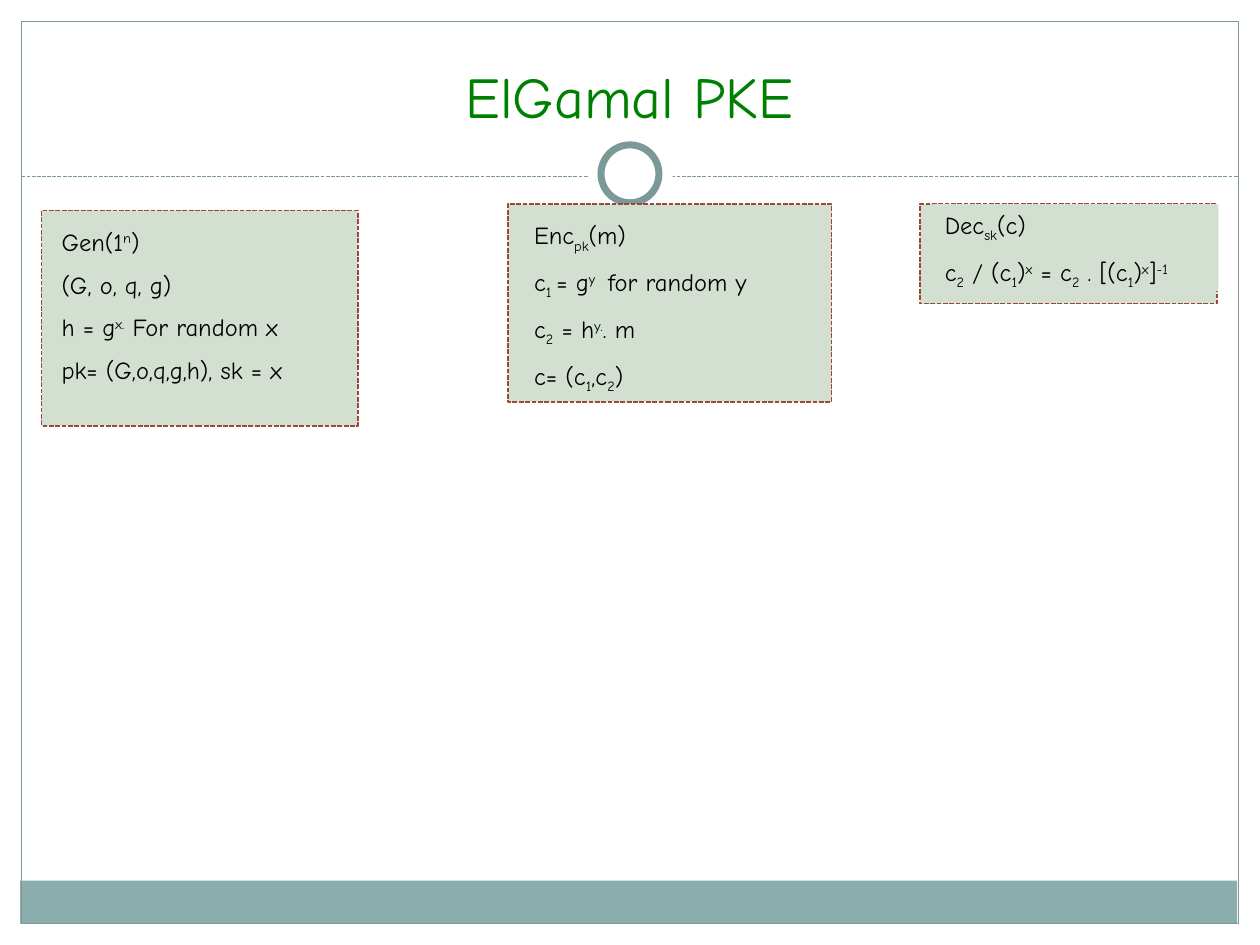
from dataclasses import dataclass
from typing import Any

from pptx import Presentation
from pptx.dml.color import RGBColor
from pptx.enum.dml import MSO_LINE_DASH_STYLE as Dash
from pptx.enum.shapes import MSO_CONNECTOR as Connector, MSO_SHAPE as Shape
from pptx.enum.text import MSO_ANCHOR as Anchor, PP_ALIGN as Align
from pptx.oxml.ns import qn
from pptx.util import Emu, Pt

PX = 9144  # EMU per px, 100 px to the inch


@dataclass(frozen=True)
class Theme:
    font: str = "Comic Neue"
    title: str = "008000"
    ink: str = "000000"
    paper: str = "FFFFFF"
    rule: str = "7C999A"
    band: str = "8CADAE"
    card: str = "D2DFD1"
    card_edge: str = "9B4936"
    title_size: float = 33
    body_size: float = 14
    body_gap: float = 7.7


@dataclass(frozen=True)
class Rect:
    left: int
    top: int
    width: int
    height: int

    def emu(self) -> tuple[Emu, ...]:
        return tuple(Emu(n * PX) for n in (self.left, self.top, self.width, self.height))


@dataclass(frozen=True)
class Card:
    """One algorithm; in its lines | parts spans, _ lowers one and ^ raises one."""
    frame: Rect
    body: Rect
    lines: tuple[str, ...]


THEME = Theme()
BASELINES = {"_": "-25000", "^": "30000"}
HANGING = 50

CARDS = (
    Card(Rect(403, 162, 257, 157), Rect(414, 170, 240, 140),
         ("Enc|_pk|(m)", "c|_1 |= g|^y | for random y", "c|_2| = h|^y.|. m", "c= (c|_1|,c|_2|)")),
    Card(Rect(730, 162, 236, 79), Rect(740, 162, 227, 69),
         ("Dec|_sk|(c)", "c|_2| / (c|_1|)|^x| = c|_2| . [(c|_1|)|^x|]|^-1")),
    Card(Rect(33, 167, 251, 171), Rect(39, 175, 230, 140),
         ("Gen(1|^n|)", "(G, o, q, g)", "h = g|^x.| For random x", "pk= (G,o,q,g,h), sk = x")),
)


def style_line(line: Any, color: str, width: float, dash: Any = None) -> None:
    line.color.rgb = RGBColor.from_string(color)
    line.width = Pt(width)
    if dash is not None:
        line.dash_style = dash


def add_box(shapes: Any, rect: Rect, *, kind: Any = Shape.RECTANGLE, fill: str | None = None,
            edge: str | None = None, width: float = 0.75, dash: Any = None) -> Any:
    box = shapes.add_shape(kind, *rect.emu())
    box.shadow.inherit = False
    if fill:
        box.fill.solid()
        box.fill.fore_color.rgb = RGBColor.from_string(fill)
    else:
        box.fill.background()
    if edge:
        style_line(box.line, edge, width, dash)
    else:
        box.line.fill.background()
    return box


def write_text(box: Any, lines: tuple[str, ...], *, size: float, color: str,
               align: Any = Align.LEFT, anchor: Any = Anchor.TOP,
               gap: float = 0, hanging: int = 0) -> None:
    frame = box.text_frame
    frame.word_wrap = True
    frame.vertical_anchor = anchor
    for index, line in enumerate(lines):
        para = frame.add_paragraph() if index else frame.paragraphs[0]
        para.alignment = align
        para.space_before = Pt(gap if index else 0)
        if hanging:
            properties = para._p.get_or_add_pPr()
            properties.set("marL", str(hanging * PX))
            properties.set("indent", str(-hanging * PX))
        for part in line.split("|"):
            baseline = BASELINES.get(part[0])
            span = para.add_run()
            span.text = part[1:] if baseline else part
            span.font.name = THEME.font
            span.font.size = Pt(size)
            span.font.color.rgb = RGBColor.from_string(color)
            if baseline:
                span._r.get_or_add_rPr().set("baseline", baseline)


def add_divider(shapes: Any, left: int, right: int, y: int) -> None:
    divider = shapes.add_connector(Connector.STRAIGHT, *(Emu(n * PX) for n in (left, y, right, y)))
    style_line(divider.line, THEME.rule, 0.75, Dash.SQUARE_DOT)
    properties = divider._element.spPr
    properties.append(properties.makeelement(qn("a:effectLst"), {}))


def add_card(shapes: Any, card: Card) -> None:
    group = shapes.add_group_shape().shapes
    add_box(group, card.frame, fill=THEME.card, edge=THEME.card_edge, width=0.9, dash=Dash.SQUARE_DOT)
    body = add_box(group, card.body, fill=THEME.card)
    write_text(body, card.lines, size=THEME.body_size, color=THEME.ink,
               gap=THEME.body_gap, hanging=HANGING)


def main() -> None:
    deck = Presentation()
    deck.slide_width, deck.slide_height = Emu(1000 * PX), Emu(750 * PX)
    page = deck.slides.add_slide(deck.slide_layouts[6])
    shapes = page.shapes

    add_box(shapes, Rect(16, 699, 966, 34), fill=THEME.band)
    add_box(shapes, Rect(17, 17, 966, 716), edge=THEME.rule)
    add_divider(shapes, 17, 983, 140)
    add_box(shapes, Rect(467, 105, 67, 67), kind=Shape.OVAL, fill=THEME.paper)
    add_box(shapes, Rect(477, 115, 46, 46), kind=Shape.OVAL, fill=THEME.paper,
            edge=THEME.rule, width=4)

    title = shapes.add_textbox(*Rect(33, 25, 933, 83).emu())
    write_text(title, ("ElGamal PKE",), size=THEME.title_size, color=THEME.title,
               align=Align.CENTER, anchor=Anchor.BOTTOM)
    for card in CARDS:
        add_card(shapes, card)

    deck.save("out.pptx")


if __name__ == "__main__":
    main()
